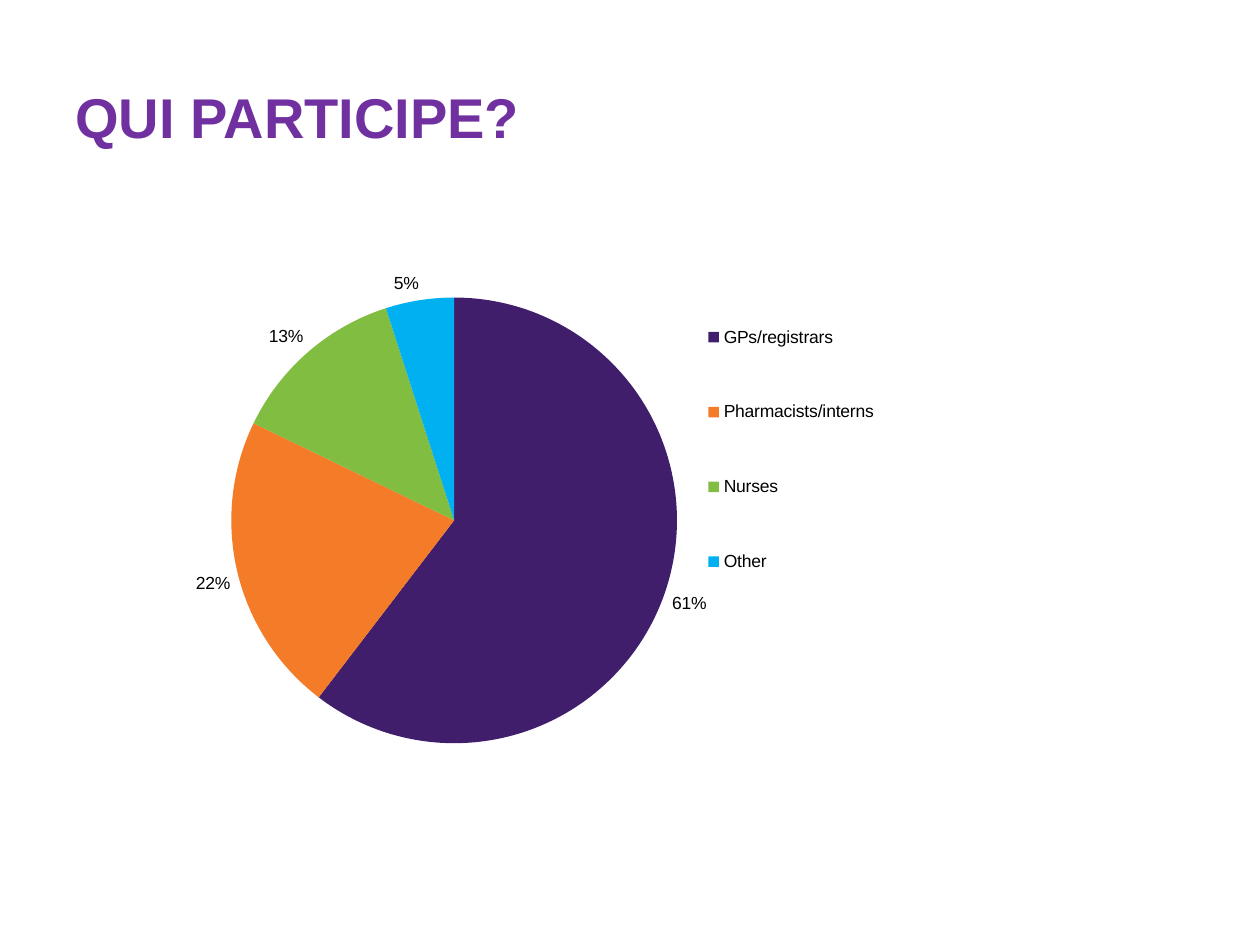
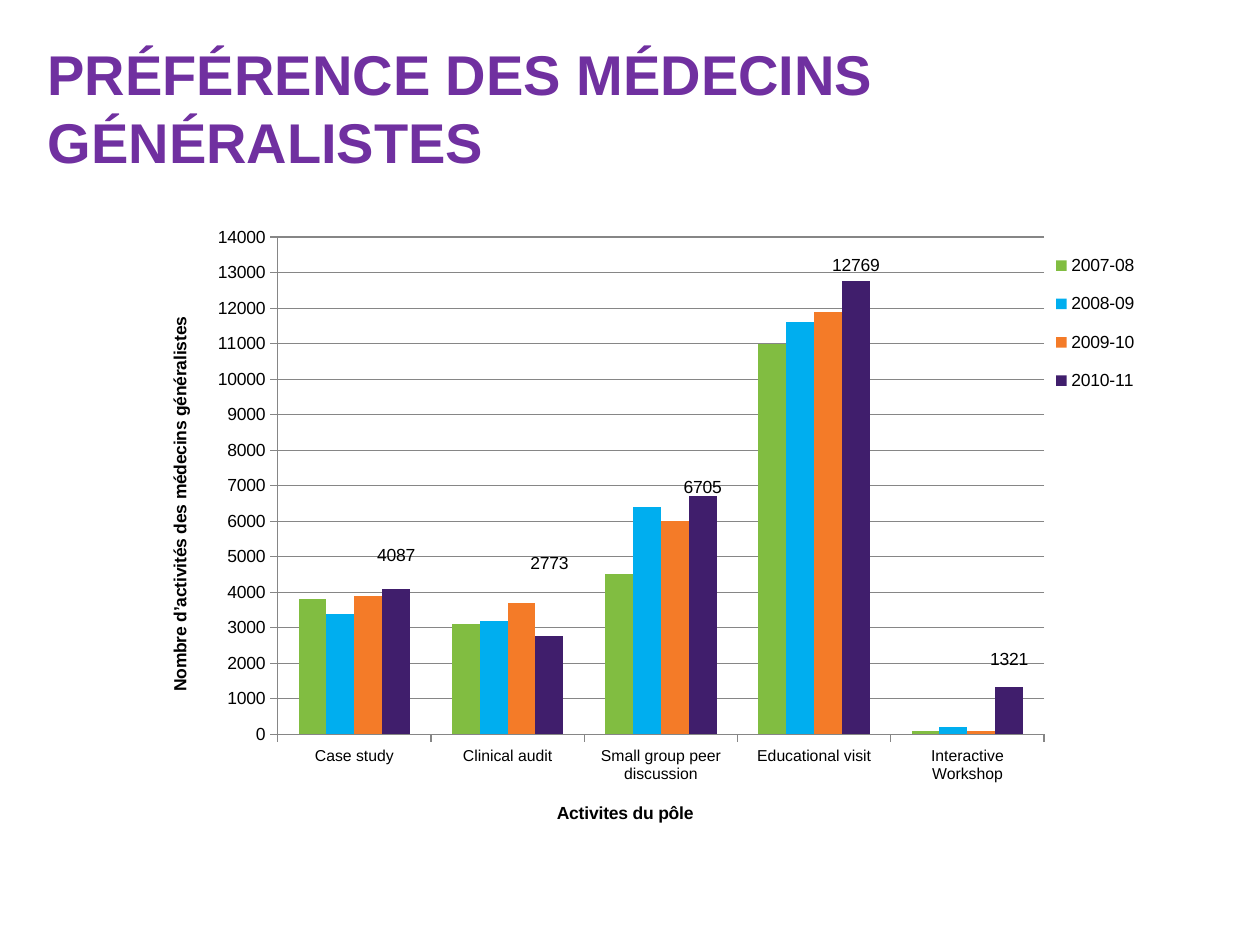
from dataclasses import dataclass
from typing import Optional

from lxml import etree
from pptx import Presentation
from pptx import util as u
from pptx.chart.data import CategoryChartData
from pptx.dml.color import RGBColor
from pptx.enum import chart as ch, text
from pptx.oxml.ns import qn

FONT = "Arial"
TITLE_PURPLE = RGBColor(0x70, 0x30, 0xA0)
INK = RGBColor(0, 0, 0)
GRID_GREY = RGBColor(0x86, 0x86, 0x86)
PLUM = RGBColor(0x40, 0x1E, 0x6C)
ORANGE = RGBColor(0xF4, 0x7B, 0x28)
GREEN = RGBColor(0x81, 0xBD, 0x41)
SKY = RGBColor(0x00, 0xB0, 0xF0)
CYAN = RGBColor(0x00, 0xAE, 0xEF)


@dataclass(frozen=True)
class Box:
    left: float
    top: float
    width: float
    height: float

    def lengths(self) -> tuple:
        return tuple(u.Inches(v) for v in (self.left, self.top, self.width, self.height))


@dataclass(frozen=True)
class Heading:
    wording: str
    box: Box
    line_spacing: Optional[u.Pt] = None


@dataclass(frozen=True)
class Series:
    name: str
    values: tuple
    color: RGBColor


PARTICIPANTS = {
    "GPs/registrars": (61, PLUM),
    "Pharmacists/interns": (22, ORANGE),
    "Nurses": (13, GREEN),
    "Other": (5, SKY),
}
ACTIVITIES = ("Case study", "Clinical audit", "Small group peer discussion",
              "Educational visit", "Interactive Workshop")
YEARS = (
    Series("2007-08", (3800, 3100, 4500, 11000, 100), GREEN),
    Series("2008-09", (3400, 3200, 6400, 11600, 200), CYAN),
    Series("2009-10", (3900, 3700, 6000, 11900, 100), ORANGE),
    Series("2010-11", (4087, 2773, 6705, 12769, 1321), PLUM),
)
# How far each 2010-11 label is lifted, as a share of the chart height
LABEL_LIFTS = (0.03, 0.09, -0.01, 0, 0.02)


def set_layout(parent, after: Optional[str], **settings) -> None:
    """Give a chart part a manual layout, placed after the named child or first."""
    for old in parent.findall(qn("c:layout")):
        parent.remove(old)
    layout = etree.Element(qn("c:layout"))
    manual = etree.SubElement(layout, qn("c:manualLayout"))
    for tag, value in settings.items():
        etree.SubElement(manual, qn(f"c:{tag}")).set("val", str(value))
    if after:
        parent.find(qn(after)).addnext(layout)
    else:
        parent.insert(0, layout)


def add_slide(deck, heading: Heading):
    slide = deck.slides.add_slide(deck.slide_layouts[6])
    frame = slide.shapes.add_textbox(*heading.box.lengths()).text_frame
    frame.word_wrap = True
    frame.vertical_anchor = text.MSO_ANCHOR.MIDDLE
    line = frame.paragraphs[0]
    if heading.line_spacing:
        line.line_spacing = heading.line_spacing
    run = line.add_run()
    run.text = heading.wording
    run.font.name = FONT
    run.font.size = u.Pt(32)
    run.font.bold = True
    run.font.color.rgb = TITLE_PURPLE
    return slide


def style_font(font, size: float = 10, bold: bool = False) -> None:
    font.name = FONT
    font.size = u.Pt(size)
    font.bold = bold
    font.color.rgb = INK


def paint(part, color: RGBColor) -> None:
    part.format.fill.solid()
    part.format.fill.fore_color.rgb = color


def add_chart(slide, kind, box: Box, data: CategoryChartData, plot: Box, legend: Box):
    """Add a chart; plot and legend are shares of the chart's size."""
    chart = slide.shapes.add_chart(kind, *box.lengths(), data).chart
    chart.has_title = False
    style_font(chart.font)
    chart.has_legend = True
    chart.legend.position = ch.XL_LEGEND_POSITION.RIGHT
    chart.legend.include_in_layout = False
    style_font(chart.legend.font)
    plot_area = chart.plots[0]._element.getparent()
    for part, after, area, target in (
            (plot_area, None, plot, {"layoutTarget": "inner"}),
            (chart.legend._element, "c:legendPos", legend, {})):
        set_layout(part, after, **target, xMode="edge", yMode="edge",
                   x=area.left, y=area.top, w=area.width, h=area.height)
    return chart


def style_axis(axis, title: str, x: float, y: float, size: float = 10) -> None:
    axis.major_tick_mark = ch.XL_TICK_MARK.OUTSIDE
    axis.format.line.color.rgb = GRID_GREY
    style_font(axis.tick_labels.font, size)
    run = axis.axis_title.text_frame.paragraphs[0].add_run()
    run.text = title
    style_font(run.font, bold=True)
    set_layout(axis.axis_title._element, "c:tx", xMode="edge", yMode="edge", x=x, y=y)


def show_labels(labels) -> None:
    """Show values outside the ends, without leader lines."""
    labels.show_value = True
    labels.position = ch.XL_LABEL_POSITION.OUTSIDE_END
    style_font(labels.font)
    for leader in labels._element.findall(qn("c:showLeaderLines")):
        leader.set("val", "0")


def build_participants(deck) -> None:
    slide = add_slide(deck, Heading("QUI PARTICIPE?", Box(0.5, 0.56, 9, 0.93), u.Pt(23)))
    data = CategoryChartData()
    data.categories = list(PARTICIPANTS)
    data.add_series("Series 1", [share for share, _ in PARTICIPANTS.values()])
    chart = add_chart(slide, ch.XL_CHART_TYPE.PIE, Box(1.21, 2.04, 6.22, 4.02), data,
                      plot=Box(0.1, 0.08, 0.57, 0.88), legend=Box(0.7, 0.03, 0.23, 0.7))
    pie = chart.plots[0]
    pie.vary_by_categories = True
    for index, (_, color) in enumerate(PARTICIPANTS.values()):
        paint(pie.series[0].points[index], color)
    labels = pie.series[0].data_labels
    show_labels(labels)
    labels.number_format = '0"%"'
    labels.number_format_is_linked = False


def build_preferences(deck) -> None:
    slide = add_slide(deck, Heading("PRÉFÉRENCE DES MÉDECINS GÉNÉRALISTES",
                                    Box(0.28, 0.21, 9.22, 1.28)))
    data = CategoryChartData()
    data.categories = ACTIVITIES
    for year in YEARS:
        data.add_series(year.name, year.values)
    chart = add_chart(slide, ch.XL_CHART_TYPE.COLUMN_CLUSTERED, Box(1.15, 1.68, 8.11, 5.06),
                      data, plot=Box(0.13, 0.04, 0.75, 0.78),
                      legend=Box(0.88, 0.04, 0.1, 0.27))
    columns = chart.plots[0]
    columns.vary_by_categories = False
    columns.gap_width = 150
    columns.overlap = 0
    for series, year in zip(columns.series, YEARS):
        paint(series, year.color)

    style_axis(chart.category_axis, "Activites du pôle", 0.4, 0.92, size=9)
    counts = chart.value_axis
    style_axis(counts, "Nombre d’activités des médecins généralistes", 0.02, 0.16)
    counts.minimum_scale, counts.maximum_scale, counts.major_unit = 0, 14000, 1000
    counts.has_major_gridlines = True
    counts.major_gridlines.format.line.color.rgb = GRID_GREY

    latest = columns.series[-1]
    show_labels(latest.data_labels)
    for index, lift in enumerate(LABEL_LIFTS):
        label = latest.points[index].data_label
        label.position = ch.XL_LABEL_POSITION.OUTSIDE_END
        style_font(label.font)
        if lift:
            entry = latest.data_labels._element.findall(qn("c:dLbl"))[index]
            set_layout(entry, "c:idx", x=0, y=-lift)


def main() -> None:
    deck = Presentation()
    deck.slide_width, deck.slide_height = u.Inches(10), u.Inches(7.5)
    build_participants(deck)
    build_preferences(deck)
    deck.save("out.pptx")


if __name__ == "__main__":
    main()
